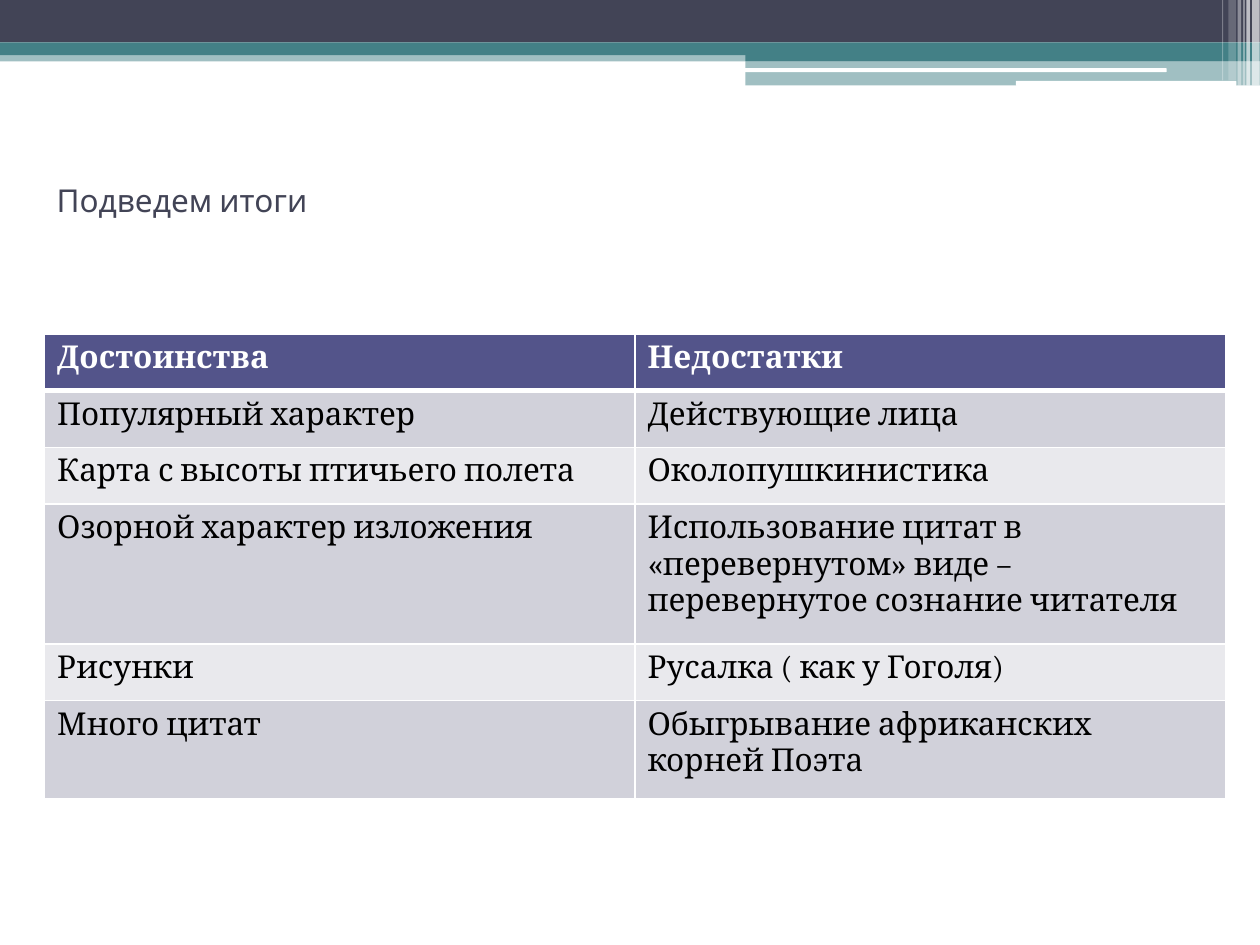
from lxml.etree import SubElement as Sub
from pptx import Presentation
from pptx.dml.color import RGBColor
from pptx.enum.shapes import MSO_SHAPE as Kind
from pptx.enum.text import MSO_ANCHOR as Anchor
from pptx.oxml.ns import qn
from pptx.util import Pt

WHITE, DARK, TEAL = "FFFFFF", "424456", "438086"
HEAD, BANDS = "53548A", ("E9E9ED", "D1D1DA")

BARS = [
    (0, 28.8, 720, 6.3, TEAL, 50),
    (0, 0, 720, 24.3, DARK, 100),
    (0, 24.3, 720, 7.2, TEAL, 100),
    (426, 28.1, 294, 6.8, TEAL, 100),
    (426, 34.9, 294, 14, TEAL, 50),
]
PILLS = [(425.5, 39, 241.2, 2.2), (580.5, 46.2, 126, 2.9)]
STRIPES = [
    (715.5, 4.3, 48.9, 65),
    (712.2, 2, 48.9, 65),
    (710.5, 0.7, 48.9, 60),
    (707.2, 2, 48.9, 40),
    (702, 4.3, 46, 20),
    (698.3, 0.7, 46, 30),
]
ROWS = [
    ("Достоинства", "Недостатки"),
    ("Популярный характер", "Действующие лица"),
    ("Карта с высоты птичьего полета", "Околопушкинистика"),
    ("Озорной характер изложения",
     "Использование цитат в «перевернутом» виде – перевернутое сознание читателя"),
    ("Рисунки", "Русалка ( как у Гоголя)"),
    ("Много цитат", "Обыгрывание африканских корней Поэта"),
]
TALL = [32.4, 32.4, 32.4, 80, 32.4, 56]


def paint(fill, tint, alpha=100):
    fill.solid()
    fill.fore_color.rgb = RGBColor.from_string(tint)
    if alpha < 100:
        mark = fill._xPr.find(".//" + qn("a:srgbClr"))
        Sub(mark, qn("a:alpha"), val=str(alpha * 1000))


def style(para, face, tint, bold=False):
    font = para.font
    font.name, font.size, font.bold = face, Pt(18), bold
    font.color.rgb = RGBColor.from_string(tint)


def add_bar(slide, box, tint, alpha=100, kind=Kind.RECTANGLE):
    bar = slide.shapes.add_shape(kind, *map(Pt, box))
    bar.shadow.inherit = False
    bar.line.fill.background()
    paint(bar.fill, tint, alpha)


def add_banner(slide, box):
    x, y, wide, high = box
    sx, sy = wide / 720, high / 48.9

    def fit(left, top, w, h):
        return x + left * sx, y + top * sy, w * sx, h * sy

    for *part, tint, alpha in BARS:
        add_bar(slide, fit(*part), tint, alpha)
    for part in PILLS:
        add_bar(slide, fit(*part), WHITE, kind=Kind.ROUNDED_RECTANGLE)
    for left, w, h, alpha in STRIPES:
        add_bar(slide, fit(left, 0, w, h), WHITE, alpha)


def add_title(slide, box, text):
    frame = slide.shapes.add_textbox(*map(Pt, box)).text_frame
    frame.word_wrap = True
    frame.vertical_anchor = Anchor.MIDDLE
    para = frame.paragraphs[0]
    para.text = text
    style(para, "Cabin", DARK)


def add_edge(cell, side, width):
    edge = Sub(cell._tc.get_or_add_tcPr(), qn("a:ln" + side), w=str(Pt(width)))
    Sub(Sub(edge, qn("a:solidFill")), qn("a:srgbClr"), val=WHITE)


def add_grid(slide, box):
    x, y, wide, high = map(Pt, box)
    grid = slide.shapes.add_table(len(ROWS), 2, x, y, wide, high).table
    for col in grid.columns:
        col.width = wide // 2
    for i, words in enumerate(ROWS):
        grid.rows[i].height = Pt(TALL[i] * box[3] / sum(TALL))
        top = i == 0
        for j, word in enumerate(words):
            cell = grid.cell(i, j)
            for side in "LRTB":
                thick = (side, i) in (("B", 0), ("T", 1))
                add_edge(cell, side, 3 if thick else 1)
            paint(cell.fill, HEAD if top else BANDS[i % 2])
            para = cell.text_frame.paragraphs[0]
            para.text = word
            style(para, "Cambria", WHITE if top else "000000", top)


def main():
    deck = Presentation()
    deck.slide_width, deck.slide_height = Pt(720), Pt(540)
    slide = deck.slides.add_slide(deck.slide_layouts[6])
    add_banner(slide, (0, 0, 720, 48.9))
    add_title(slide, (25.2, 54.7, 658.8, 119.5), "Подведем итоги")
    add_grid(slide, (25.5, 190.8, 674.7, sum(TALL)))
    deck.save("out.pptx")


if __name__ == "__main__":
    main()
